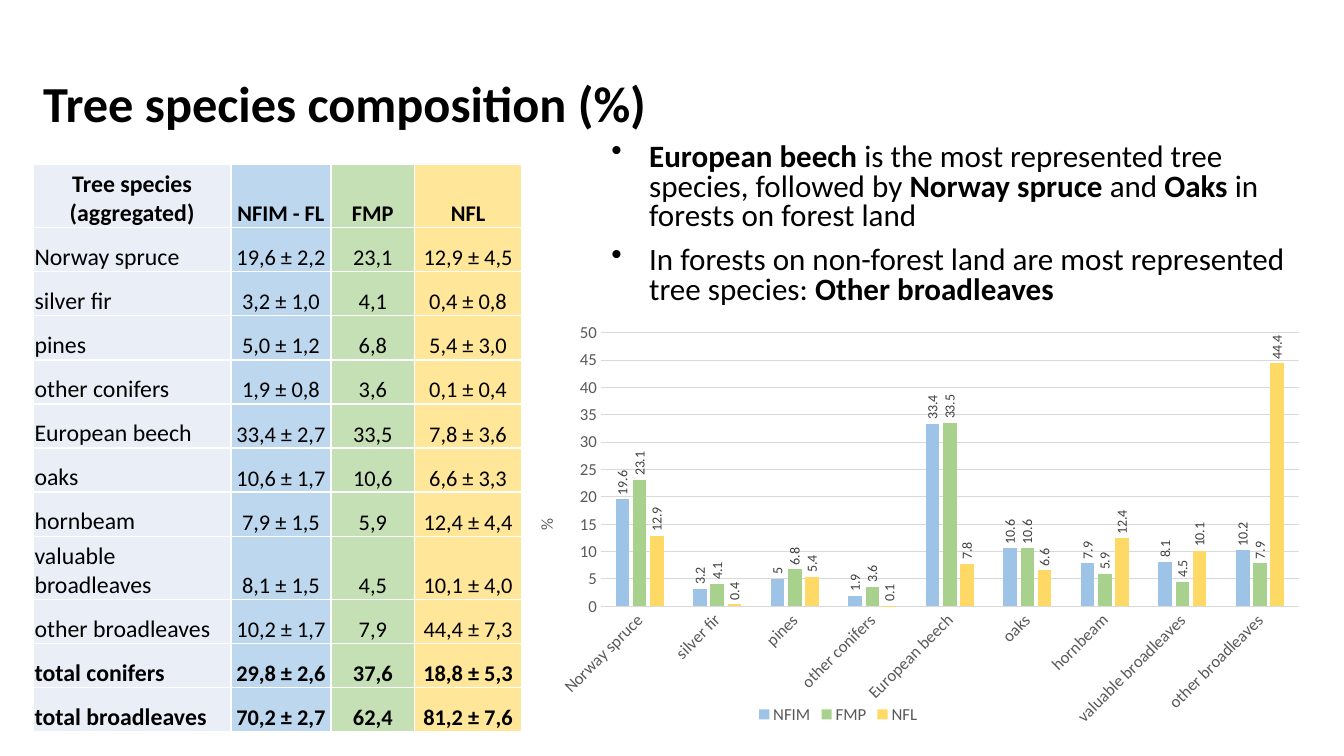
import dataclasses
import typing

import lxml.etree
import pptx
import pptx.chart.data
import pptx.dml.color
import pptx.enum.chart
import pptx.enum.text
import pptx.oxml
import pptx.oxml.ns
import pptx.util

Cm = pptx.util.Cm
Pt = pptx.util.Pt
qn = pptx.oxml.ns.qn
Align = pptx.enum.text.PP_ALIGN
Anchor = pptx.enum.text.MSO_ANCHOR


@dataclasses.dataclass(frozen=True)
class Theme:
    font: str = "Calibri"
    ink: str = "000000"
    label: str = "404040"
    axis: str = "595959"
    grid: str = "D9D9D9"
    border: str = "FFFFFF"
    title_size: float = 36
    body_size: float = 22.2
    name_size: float = 17
    value_size: float = 16
    axis_size: float = 12
    label_size: float = 10


@dataclasses.dataclass(frozen=True)
class Column:
    head: str
    width: float
    fill: str
    size: float
    align: Align


@dataclasses.dataclass(frozen=True)
class Series:
    name: str
    color: str


class Row(typing.NamedTuple):
    name: str
    nfim: str
    fmp: str
    nfl: str


THEME = Theme()
COLUMNS = [
    Column("Tree species (aggregated)", 4.98, "EAEFF7", THEME.name_size, Align.LEFT),
    Column("NFIM - FL", 2.52, "BDD7EE", THEME.value_size, Align.CENTER),
    Column("FMP", 2.11, "C5E0B4", THEME.value_size, Align.CENTER),
    Column("NFL", 2.69, "FFE699", THEME.value_size, Align.CENTER),
]
SPECIES = [
    Row("Norway spruce", "19,6 ± 2,2", "23,1", "12,9 ± 4,5"),
    Row("silver fir", "3,2 ± 1,0", "4,1", "0,4 ± 0,8"),
    Row("pines", "5,0 ± 1,2", "6,8", "5,4 ± 3,0"),
    Row("other conifers", "1,9 ± 0,8", "3,6", "0,1 ± 0,4"),
    Row("European beech", "33,4 ± 2,7", "33,5", "7,8 ± 3,6"),
    Row("oaks", "10,6 ± 1,7", "10,6", "6,6 ± 3,3"),
    Row("hornbeam", "7,9 ± 1,5", "5,9", "12,4 ± 4,4"),
    Row("valuable broadleaves", "8,1 ± 1,5", "4,5", "10,1 ± 4,0"),
    Row("other broadleaves", "10,2 ± 1,7", "7,9", "44,4 ± 7,3"),
]
TOTALS = [
    Row("total conifers", "29,8 ± 2,6", "37,6", "18,8 ± 5,3"),
    Row("total broadleaves", "70,2 ± 2,7", "62,4", "81,2 ± 7,6"),
]
SERIES = [Series("NFIM", "9DC3E6"), Series("FMP", "A9D18E"), Series("NFL", "FFD966")]
# Each point alternates plain and bold parts, starting with plain.
POINTS = [
    ["", "European beech", " is the most represented tree species, followed by ",
     "Norway spruce", " and ", "Oaks", " in forests on forest land"],
    ["In forests on non-forest land are most represented tree species: ",
     "Other broadleaves"],
]


def rgb(code: str) -> pptx.dml.color.RGBColor:
    return pptx.dml.color.RGBColor.from_string(code)


def style(font, size: float, color: str, bold: bool | None = None) -> None:
    font.name, font.size, font.bold = THEME.font, Pt(size), bold
    font.color.rgb = rgb(color)


def add_box(slide, place: tuple, anchor: Anchor):
    frame = slide.shapes.add_textbox(*map(Cm, place)).text_frame
    frame.word_wrap = True
    frame.vertical_anchor = anchor
    return frame


def add_title(slide) -> None:
    para = add_box(slide, (0.84, 1.02, 30.71, 3.12), Anchor.MIDDLE).paragraphs[0]
    para.text = "Tree species composition (%)"
    style(para.font, THEME.title_size, THEME.ink, True)


def add_points(slide) -> None:
    frame = add_box(slide, (15.16, 3.43, 17.91, 4.42), Anchor.BOTTOM)
    for place, parts in enumerate(POINTS):
        para = frame.add_paragraph() if place else frame.paragraphs[0]
        para.line_spacing, para.space_before = 0.8, Pt(10)
        style(para.font, THEME.body_size, THEME.ink)
        props = para._p.get_or_add_pPr()
        props.set("marL", str(Cm(0.95)))
        props.set("indent", str(Cm(-0.95)))
        bullet = lxml.etree.Element(qn("a:buChar"), char="•")
        props.insert_element_before(bullet, "a:tabLst", "a:defRPr", "a:extLst")
        for turn, part in enumerate(parts):
            if part:
                run = para.add_run()
                run.text, run.font.bold = part, turn % 2 == 1


def add_border(cell) -> None:
    props = cell._tc.get_or_add_tcPr()
    for place, side in enumerate(("lnL", "lnR", "lnT", "lnB")):
        props.insert(place, pptx.oxml.parse_xml(
            f'<a:{side} {pptx.oxml.ns.nsdecls("a")} w="{Pt(1)}"><a:solidFill>'
            f'<a:srgbClr val="{THEME.border}"/></a:solidFill></a:{side}>'))


def fill_cell(cell, text: str, column: Column, align: Align, bold: bool) -> None:
    cell.text = text
    cell.vertical_anchor = Anchor.BOTTOM
    cell.margin_left = cell.margin_right = cell.margin_top = Cm(0.03)
    cell.margin_bottom = 0
    cell.fill.solid()
    cell.fill.fore_color.rgb = rgb(column.fill)
    add_border(cell)
    para = cell.text_frame.paragraphs[0]
    para.alignment = align
    style(para.font, column.size, THEME.ink, bold)


def add_table(slide) -> None:
    rows = [Row(*(column.head for column in COLUMNS)), *SPECIES, *TOTALS]
    table = slide.shapes.add_table(
        len(rows), len(COLUMNS), *map(Cm, (0.84, 4.14, 12.3, 14.3))).table
    table.first_row = table.horz_banding = False
    for down, row in enumerate(rows):
        table.rows[down].height = Cm(1.6 if down == 0 or row.name == "valuable broadleaves" else 1.11)
        bold = row not in SPECIES
        for across, (text, column) in enumerate(zip(row, COLUMNS)):
            align = column.align if down else Align.CENTER
            fill_cell(table.cell(down, across), text, column, align, bold)
    for across, column in enumerate(COLUMNS):
        table.columns[across].width = Cm(column.width)


def mean(text: str) -> float:
    """Return the number ahead of the ± sign."""
    return float(text.split()[0].replace(",", "."))


def turn_text(node, angle: int) -> None:
    body = node.find(".//" + qn("a:bodyPr"))
    body.set("rot", str(angle * 60000))
    body.set("vert", "horz")


def set_layout(node, index: int, **parts: str | float) -> None:
    """Pin a chart part, given as shares of the chart's size."""
    for old in node.findall(qn("c:layout")):
        node.remove(old)
    layout = lxml.etree.Element(qn("c:layout"))
    manual = lxml.etree.SubElement(layout, qn("c:manualLayout"))
    for name, value in parts.items():
        lxml.etree.SubElement(manual, qn("c:" + name), val=str(value))
    node.insert(index, layout)


def style_axes(chart) -> None:
    for axis in (chart.category_axis, chart.value_axis):
        axis.major_tick_mark = pptx.enum.chart.XL_TICK_MARK.NONE
        style(axis.tick_labels.font, THEME.axis_size, THEME.axis)
    chart.category_axis.format.line.color.rgb = rgb(THEME.grid)
    chart.category_axis.format.line.width = Pt(0.75)
    turn_text(chart.category_axis._element.find(qn("c:txPr")), -45)
    axis = chart.value_axis
    axis.minimum_scale, axis.maximum_scale, axis.major_unit = 0, 50, 5
    axis.format.line.fill.background()
    axis.major_gridlines.format.line.color.rgb = rgb(THEME.grid)
    axis.major_gridlines.format.line.width = Pt(0.75)
    frame = axis.axis_title.text_frame
    frame.text = "%"
    style(frame.paragraphs[0].font, THEME.axis_size, THEME.axis, False)
    turn_text(axis.axis_title._element, -90)


def add_chart(slide) -> None:
    data = pptx.chart.data.CategoryChartData()
    data.categories = [row.name for row in SPECIES]
    for place, item in enumerate(SERIES, start=1):
        data.add_series(item.name, [mean(row[place]) for row in SPECIES])
    chart = slide.shapes.add_chart(
        pptx.enum.chart.XL_CHART_TYPE.COLUMN_CLUSTERED,
        *map(Cm, (13.41, 7.85, 19.94, 10.54)), data).chart
    style(chart.font, THEME.label_size, THEME.ink)
    chart.has_title = False
    plot = chart.plots[0]
    plot.gap_width, plot.overlap, plot.vary_by_categories = 219, -27, False
    for series, item in zip(plot.series, SERIES):
        series.format.fill.solid()
        series.format.fill.fore_color.rgb = rgb(item.color)
        labels = series.data_labels
        labels.show_value = True
        labels.position = pptx.enum.chart.XL_LABEL_POSITION.OUTSIDE_END
        style(labels.font, THEME.label_size, THEME.label)
        turn_text(labels._element, -90)
    style_axes(chart)
    chart.has_legend = True
    legend = chart.legend
    legend.position = pptx.enum.chart.XL_LEGEND_POSITION.BOTTOM
    legend.include_in_layout = False
    style(legend.font, THEME.axis_size, THEME.axis)
    set_layout(legend._element, 1, xMode="edge", yMode="edge", x=0.28, y=0.93)
    set_layout(chart._chartSpace.chart.plotArea, 0, layoutTarget="inner",
               xMode="edge", yMode="edge", x=0.087, y=0.051, w=0.882, h=0.654)


def main() -> None:
    deck = pptx.Presentation()
    deck.slide_width, deck.slide_height = Cm(33.87), Cm(19.05)
    slide = deck.slides.add_slide(deck.slide_layouts[6])
    for draw in (add_title, add_points, add_table, add_chart):
        draw(slide)
    deck.save("out.pptx")


if __name__ == "__main__":
    main()
